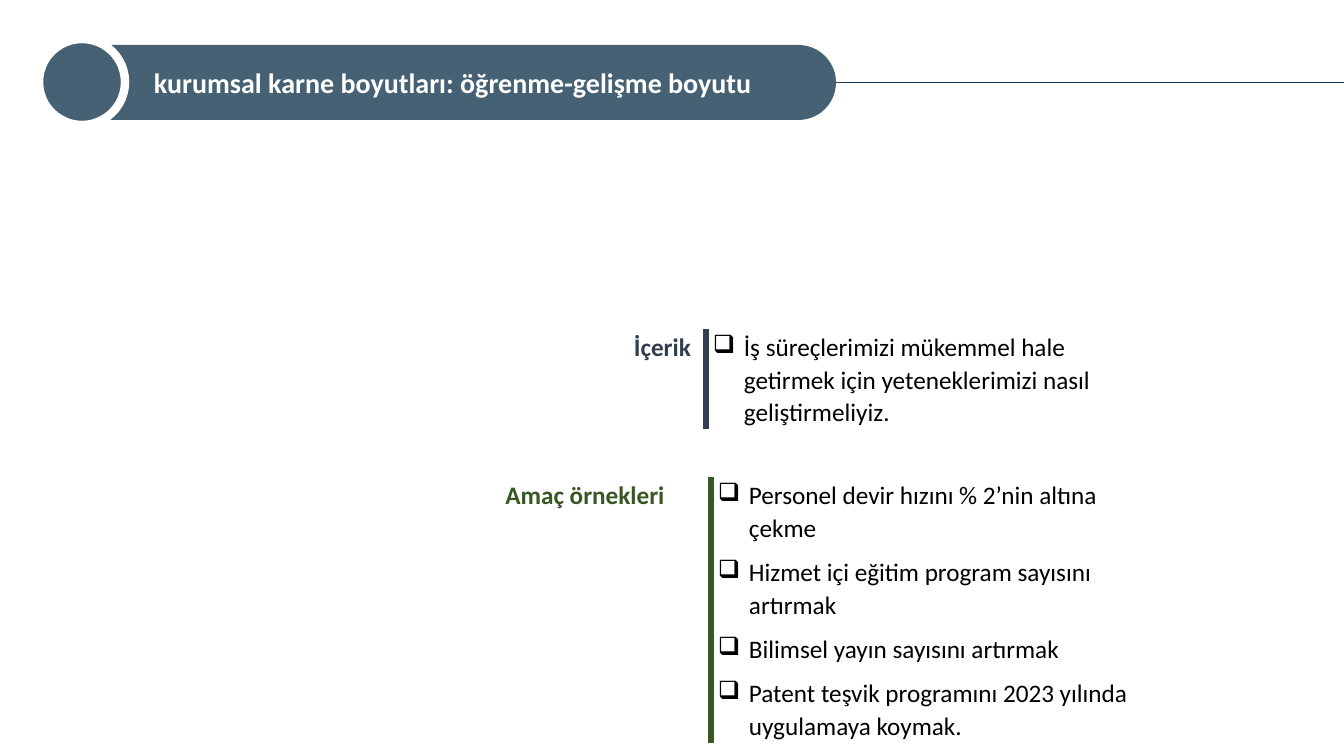
from lxml.etree import SubElement
from pptx import Presentation
from pptx.dml.color import RGBColor
from pptx.enum.shapes import MSO_CONNECTOR as CONNECTOR, MSO_SHAPE as SHAPE
from pptx.enum.text import MSO_ANCHOR as ANCHOR, PP_ALIGN as ALIGN
from pptx.oxml import parse_xml
from pptx.oxml.ns import nsdecls, qn
from pptx.util import Pt

EMU_PER_PX = 914400 / 100.8
COLORS = {
    "white": "FFFFFF",
    "black": "000000",
    "slate": "456173",
    "rule": "1B3C59",
    "content": "333F50",
    "goals": "385723",
}


def px(length):
    """Turn a length in px into EMU."""
    return round(length * EMU_PER_PX)


def rgb(name):
    """Look up a named colour."""
    return RGBColor.from_string(COLORS[name])


def write(paragraph, text, size=18, color="black", bold=False, align=ALIGN.LEFT,
          line_spacing=None, space_after=None, bullet=None, indent=31):
    """Put formatted text into a paragraph."""
    paragraph.alignment = align
    if line_spacing is not None:
        paragraph.line_spacing = line_spacing
    if space_after is not None:
        paragraph.space_after = Pt(space_after)
    if bullet:
        properties = paragraph._p.get_or_add_pPr()
        properties.set("marL", str(px(indent)))
        properties.set("indent", str(-px(indent)))
        SubElement(properties, qn("a:buChar")).set("char", bullet)
    run = paragraph.add_run()
    run.text = text
    font = run.font
    font.name, font.size, font.bold = "Calibri", Pt(size), bold
    font.color.rgb = rgb(color)


class SlideBuilder:
    """Hold the style and the current slide."""

    body = {"line_spacing": 1.07, "space_after": 8}

    def __init__(self, presentation):
        """Add a blank slide."""
        self.slide = presentation.slides.add_slide(presentation.slide_layouts[6])

    def shape(self, kind, left, top, width, height, fill, outline=None, weight=1):
        """Add a filled preset shape."""
        shape = self.slide.shapes.add_shape(kind, *map(px, (left, top, width, height)))
        shape.shadow.inherit = False
        shape.fill.solid()
        shape.fill.fore_color.rgb = rgb(fill)
        if outline:
            shape.line.color.rgb = rgb(outline)
            shape.line.width = Pt(weight)
        else:
            shape.line.fill.background()
        return shape

    def title(self, text, left, top, width, height, inset):
        """Add the pill that carries the title."""
        pill = self.shape(SHAPE.ROUNDED_RECTANGLE, left, top, width, height, "slate")
        pill.adjustments[0] = 0.5
        frame = pill.text_frame
        frame.margin_left = px(inset)
        frame.vertical_anchor = ANCHOR.MIDDLE
        write(frame.paragraphs[0], text, size=20, color="white", bold=True)

    def line(self, left, top, right, bottom, color, weight):
        """Add a straight line."""
        line = self.slide.shapes.add_connector(
            CONNECTOR.STRAIGHT, *map(px, (left, top, right, bottom)))
        line.line.color.rgb = rgb(color)
        line.line.width = Pt(weight)
        SubElement(line._element.spPr, qn("a:effectLst"))

    def cell(self, cell, margin_right=7, **borders):
        """Style a table cell and draw its borders."""
        cell.margin_left, cell.margin_right = px(7), px(margin_right)
        cell.margin_top = cell.margin_bottom = 0
        cell.fill.solid()
        cell.fill.fore_color.rgb = rgb("white")
        for index, (side, (color, weight)) in enumerate(borders.items()):
            border = parse_xml(
                f'<a:ln{side} {nsdecls("a")} w="{Pt(weight)}"><a:solidFill>'
                f'<a:srgbClr val="{COLORS[color]}"/></a:solidFill></a:ln{side}>')
            cell._tc.get_or_add_tcPr().insert(index, border)
        return cell.text_frame

    def section(self, label, items, left, top, widths, height, color, align, margin_right=7):
        """Add a table with a label beside a bulleted list."""
        table = self.slide.shapes.add_table(
            1, 2, *map(px, (left, top, sum(widths), height))).table
        table.first_row = table.horz_banding = False
        for column, width in zip(table.columns, widths):
            column.width = px(width)
        divider = (color, 4.5)
        label_frame = self.cell(table.cell(0, 0), margin_right, R=divider)
        write(label_frame.paragraphs[0], label, color=color, bold=True, align=align, **self.body)
        list_frame = self.cell(table.cell(0, 1), L=divider, R=("white", 1))
        for index, item in enumerate(items):
            paragraph = list_frame.add_paragraph() if index else list_frame.paragraphs[0]
            write(paragraph, item, bullet="❑", **self.body)


def main():
    """Build the slide and save it."""
    presentation = Presentation()
    presentation.slide_width, presentation.slide_height = px(1344), px(756)
    builder = SlideBuilder(presentation)
    builder.title("kurumsal karne boyutları: öğrenme-gelişme boyutu", 39, 45, 797, 75, inset=104)
    builder.shape(SHAPE.OVAL, 39, 39, 86, 86, "slate", outline="white", weight=6)
    builder.line(836, 82, 1344, 82, "rule", 0.5)
    builder.section(
        "Amaç örnekleri",
        ["Personel devir hızını % 2’nin altına çekme",
         "Hizmet içi eğitim program sayısını artırmak",
         "Bilimsel yayın sayısını artırmak",
         "Patent teşvik programını 2023 yılında uygulamaya koymak."],
        459, 478, (252, 449), 259, "goals", ALIGN.CENTER)
    builder.section(
        "İçerik",
        ["İş süreçlerimizi mükemmel hale getirmek için yeteneklerimizi nasıl geliştirmeliyiz."],
        495, 330, (211, 399), 96, "content", ALIGN.RIGHT, margin_right=15)
    presentation.save("out.pptx")


if __name__ == "__main__":
    main()
